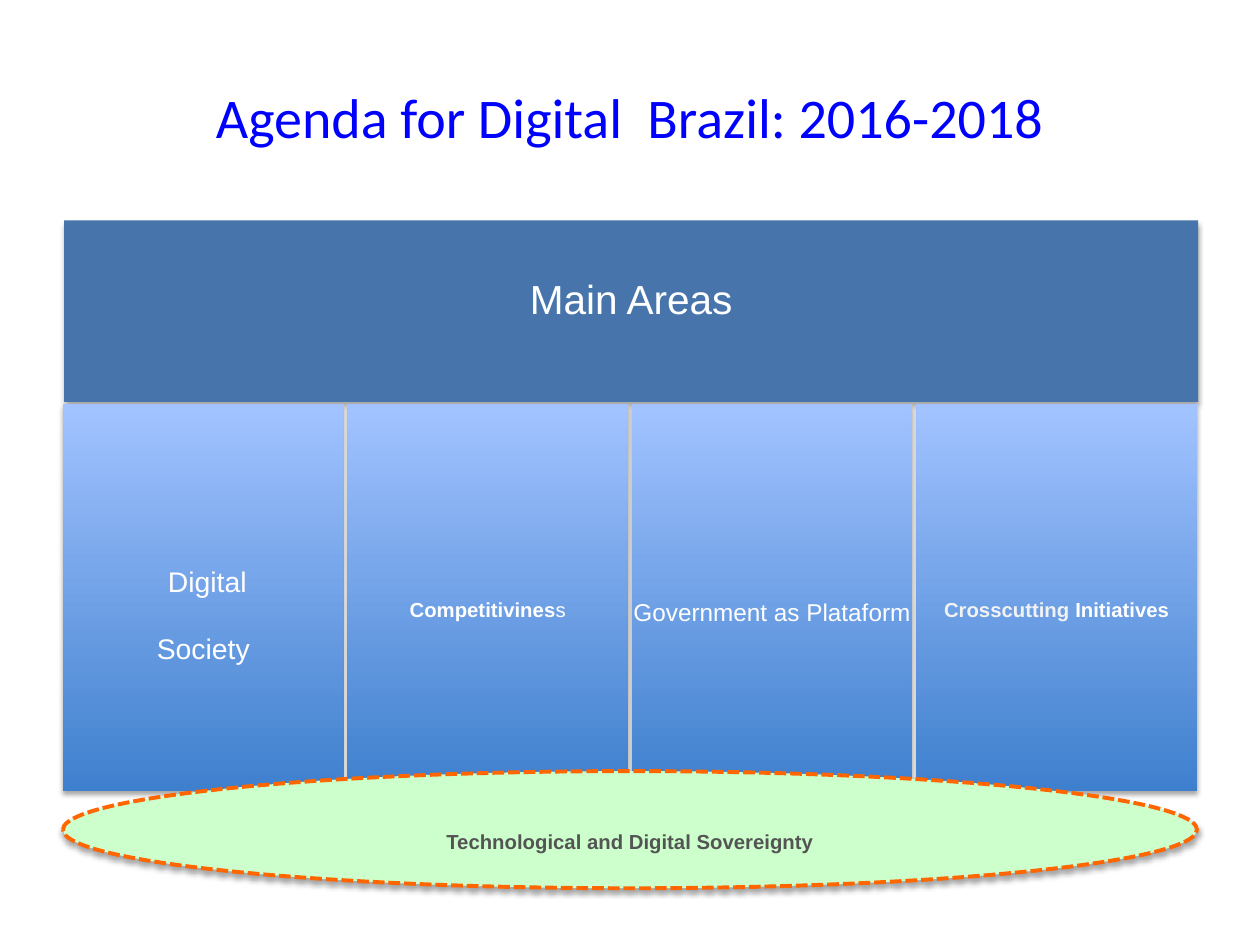
from dataclasses import dataclass

import lxml.etree
import pptx
import pptx.dml.color
import pptx.enum.dml
import pptx.enum.shapes
import pptx.enum.text
import pptx.oxml.ns
import pptx.util

Inches, Pt = pptx.util.Inches, pptx.util.Pt
SHAPE = pptx.enum.shapes.MSO_SHAPE
ANCHOR = pptx.enum.text.MSO_ANCHOR


@dataclass(frozen=True)
class Theme:
    title_font: str = "Calibri"
    body_font: str = "Arial"
    title: str = "0000FF"
    header: str = "4775AB"
    column_bottom: str = "3F80CE"
    column_top: str = "A2C3FF"
    base: str = "CCFFCC"
    base_line: str = "FF6600"
    base_text: str = "545454"
    white: str = "FFFFFF"
    off_white: str = "F2F2F2"
    title_size: int = 32
    header_size: int = 40
    large: int = 28
    medium: int = 24
    small: int = 20


@dataclass(frozen=True)
class Box:
    x: float
    y: float
    w: float
    h: float

    def emu(self):
        return [Inches(v) for v in (self.x, self.y, self.w, self.h)]

    def columns(self, count, gap):
        w = (self.w - gap * (count - 1)) / count
        return [Box(self.x + i * (w + gap), self.y, w, self.h) for i in range(count)]

    def centred(self, w_share, h):
        w = self.w * w_share
        return Box(self.x + (self.w - w) / 2, self.y + (self.h - h) / 2, w, h)


THEME = Theme()


def rgb(value):
    return pptx.dml.color.RGBColor.from_string(value)


def add_panel(s, kind, box):
    """Add a borderless shape with a soft shadow below it."""
    sp = s.shapes.add_shape(kind, *box.emu())
    sp.line.fill.background()
    sp.shadow.inherit = False
    effects = sp._element.spPr.find(pptx.oxml.ns.qn("a:effectLst"))
    shadow = lxml.etree.SubElement(
        effects, pptx.oxml.ns.qn("a:outerShdw"), blurRad=str(Pt(3)),
        dist=str(Pt(1.8)), dir="5400000", rotWithShape="0")
    colour = lxml.etree.SubElement(shadow, pptx.oxml.ns.qn("a:srgbClr"), val="000000")
    lxml.etree.SubElement(colour, pptx.oxml.ns.qn("a:alpha"), val="35000")
    return sp


def add_label(s, box, paragraphs, size, inset=0, anchor=ANCHOR.MIDDLE):
    """Add centred, lowered text; each run is (text, colour, bold)."""
    tf = s.shapes.add_textbox(*box.emu()).text_frame
    tf.word_wrap = True
    tf.auto_size = pptx.enum.text.MSO_AUTO_SIZE.SHAPE_TO_FIT_TEXT
    tf.vertical_anchor = anchor
    tf.margin_left = tf.margin_right = Inches(inset)
    tf.margin_top = tf.margin_bottom = Inches(inset)
    for i, runs in enumerate(paragraphs):
        p = tf.add_paragraph() if i else tf.paragraphs[0]
        p.alignment = pptx.enum.text.PP_ALIGN.CENTER
        p.font.name, p.font.size = THEME.body_font, Pt(size)
        for text, colour, bold in runs:
            r = p.add_run()
            r.text = text
            r.font.size = Pt(size)
            r.font.bold = bold
            r.font.color.rgb = rgb(colour)
            r.font._element.set("baseline", "-25000")


def add_title(s, box, text):
    title = s.shapes.title
    title.left, title.top, title.width, title.height = box.emu()
    tf = title.text_frame
    tf.text = text
    tf.vertical_anchor = ANCHOR.MIDDLE
    p = tf.paragraphs[0]
    p.alignment = pptx.enum.text.PP_ALIGN.CENTER
    p.font.name, p.font.size = THEME.title_font, Pt(THEME.title_size)
    p.font.color.rgb = rgb(THEME.title)


def add_header(s, box, text):
    sp = add_panel(s, SHAPE.RECTANGLE, box)
    sp.fill.solid()
    sp.fill.fore_color.rgb = rgb(THEME.header)
    add_label(s, Box(box.x, box.y, box.w, 0.77), [[(text, THEME.white, False)]],
              THEME.header_size, inset=0.05, anchor=ANCHOR.TOP)


def add_areas(s, box, areas):
    for cell, (paragraphs, size, height) in zip(box.columns(len(areas), 0.03), areas):
        sp = add_panel(s, SHAPE.RECTANGLE, cell)
        sp.fill.gradient()
        sp.fill.gradient_angle = 90
        colours = (THEME.column_bottom, THEME.column_top)
        for position, (stop, colour) in enumerate(zip(sp.fill.gradient_stops, colours)):
            stop.position = position
            stop.color.rgb = rgb(colour)
        add_label(s, cell.centred(1, height), paragraphs, size)


def add_foundation(s, box, text):
    sp = add_panel(s, SHAPE.OVAL, box)
    sp.fill.solid()
    sp.fill.fore_color.rgb = rgb(THEME.base)
    sp.line.color.rgb = rgb(THEME.base_line)
    sp.line.width = Pt(2.25)
    sp.line.dash_style = pptx.enum.dml.MSO_LINE.SQUARE_DOT
    add_label(s, box.centred(0.71, 0.22), [[(text, THEME.base_text, True)]], THEME.small)


def main():
    prs = pptx.Presentation()
    prs.slide_width, prs.slide_height = Inches(10), Inches(7.5)
    s = prs.slides.add_slide(prs.slide_layouts[5])
    white = THEME.white

    # Title and header band
    add_title(s, Box(0.5, 0.3, 9, 1.25), "Agenda for Digital  Brazil: 2016-2018")
    add_header(s, Box(0.51, 1.75, 9, 1.44), "Main Areas")

    # Four areas: paragraphs, type size, label height
    add_areas(s, Box(0.5, 3.21, 9, 3.07), [
        ([[(" Digital", white, False)], [("Society", white, False)]], THEME.large, 0.99),
        ([[("Competitivines", white, True), ("s", white, False)]], THEME.small, 0.34),
        ([[("Government as Plataform", white, False)]], THEME.medium, 0.88),
        ([[("Crosscutting ", THEME.off_white, True), ("Initiatives", white, True)]],
         THEME.small, 0.22),
    ])

    # Shared foundation
    add_foundation(s, Box(0.5, 6.12, 9, 0.93), "Technological and Digital Sovereignty")
    prs.save("out.pptx")


if __name__ == "__main__":
    main()
